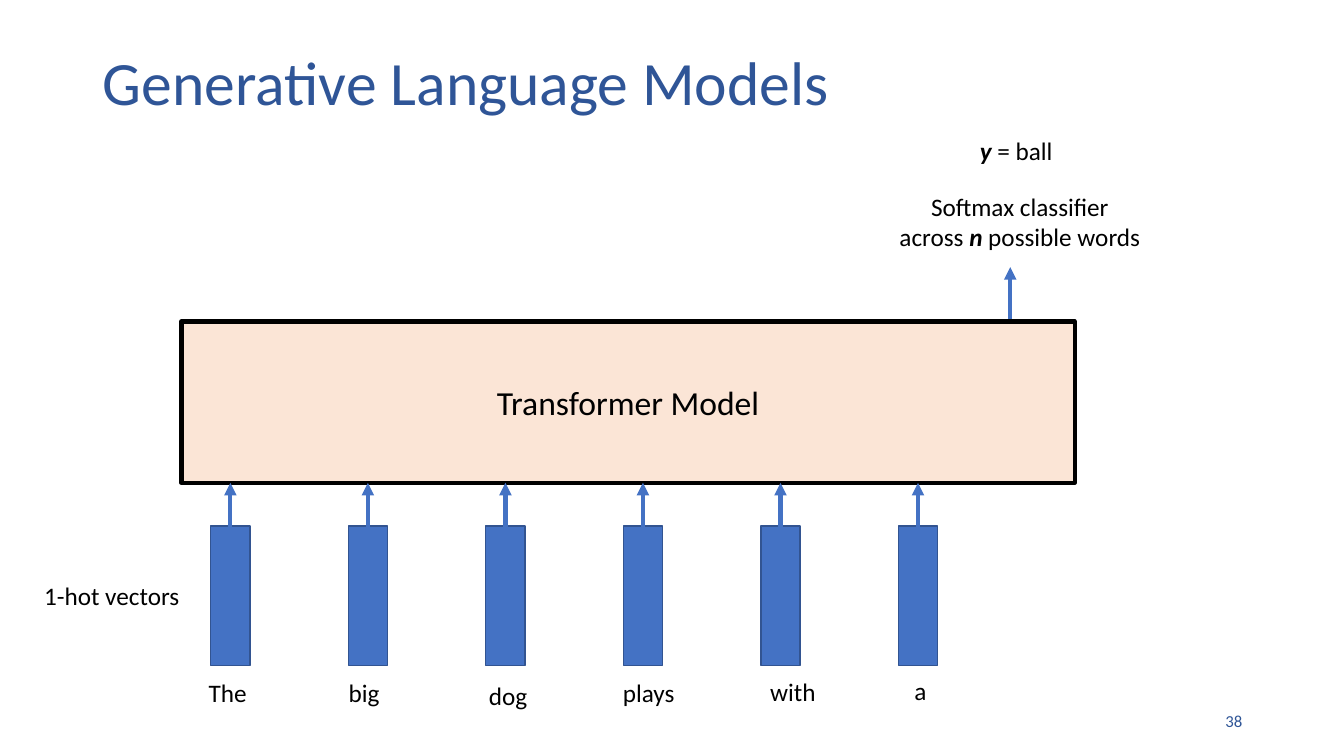
"""Builds a slide on generative language models: word vectors feeding a transformer."""
from pptx import Presentation, util as u
from pptx.dml.color import RGBColor
from pptx.enum import shapes, text
from pptx.oxml import parse_xml
from pptx.oxml.ns import nsdecls

TITLE = "Generative Language Models"
MODEL = "Transformer Model"
WORDS = [("The", 1.97, 6.67), ("big", 3.36, 6.67), ("dog", 4.75, 6.70),
         ("plays", 6.08, 6.67), ("with", 7.54, 6.66), ("a", 8.97, 6.65)]
LABELS = [
    ([[("1-hot vectors", False)]], (0.34, 5.71, 1.56, 0.4)),
    ([[("Softmax classifier", False)],
      [("across ", False), ("n", True), (" possible words", False)]],
     (8.81, 1.85, 2.61, 0.71)),
    ([[("y", True), (" = ball", False)]], (9.62, 1.29, 0.99, 0.4)),
]
PAGE = "38"

NAVY = RGBColor(0x2F, 0x55, 0x97)
BLUE = RGBColor(0x44, 0x72, 0xC4)
EDGE = RGBColor(0x32, 0x54, 0x91)
PEACH = RGBColor(0xFB, 0xE5, 0xD6)
BLACK = RGBColor(0, 0, 0)

FIRST, PITCH = 2.09, 1.364
VECTOR_TOP, VECTOR_W, VECTOR_H = 5.22, 0.39, 1.38
MODEL_BOX = (1.8, 3.19, 8.86, 1.6)
MODEL_BOTTOM = MODEL_BOX[1] + MODEL_BOX[3]
LEFT, CENTER, RIGHT = text.PP_ALIGN.LEFT, text.PP_ALIGN.CENTER, text.PP_ALIGN.RIGHT

prs = Presentation()
prs.slide_width, prs.slide_height = u.Inches(13.33), u.Inches(7.5)
s = prs.slides.add_slide(prs.slide_layouts[5])


def inches(values):
    return [u.Inches(v) for v in values]


def write(tf, paragraphs, size=18, color=BLACK, align=LEFT, anchor=text.MSO_ANCHOR.TOP,
          wrap=False, spacing=None):
    tf.word_wrap = wrap
    tf.auto_size = text.MSO_AUTO_SIZE.NONE
    tf.vertical_anchor = anchor
    for i, runs in enumerate(paragraphs):
        p = tf.add_paragraph() if i else tf.paragraphs[0]
        p.alignment = align
        p.line_spacing = spacing
        for words, strong in runs:
            r = p.add_run()
            r.text = words
            r.font.name, r.font.size = "Calibri", u.Pt(size)
            r.font.color.rgb = color
            r.font.bold = r.font.italic = strong


def label(paragraphs, box, **fmt):
    write(s.shapes.add_textbox(*inches(box)).text_frame, paragraphs, **fmt)


def rect(box, fill, line, width):
    sp = s.shapes.add_shape(shapes.MSO_SHAPE.RECTANGLE, *inches(box))
    sp.shadow.inherit = False
    sp.fill.solid()
    sp.fill.fore_color.rgb = fill
    sp.line.color.rgb = line
    sp.line.width = u.Pt(width)
    return sp


def arrow_up(x, start, end):
    c = s.shapes.add_connector(shapes.MSO_CONNECTOR.STRAIGHT, *inches((x, start, x, end)))
    c.line.color.rgb = BLUE
    c.line.width = u.Pt(3)
    c.line._get_or_add_ln().append(parse_xml(f'<a:tailEnd {nsdecls("a")} type="triangle"/>'))
    c._element.spPr.append(parse_xml(f'<a:effectLst {nsdecls("a")}/>'))


title = s.shapes.title
title.left, title.top, title.width, title.height = inches((0.92, 0.4, 11.5, 0.9))
write(title.text_frame, [[(TITLE, False)]], size=44, color=NAVY,
      anchor=text.MSO_ANCHOR.MIDDLE, wrap=True, spacing=0.9)

model = rect(MODEL_BOX, PEACH, BLACK, 3)
write(model.text_frame, [[(MODEL, False)]], size=24, align=CENTER,
      anchor=text.MSO_ANCHOR.MIDDLE, wrap=True)

for i, (word, x, y) in enumerate(WORDS):
    left = FIRST + i * PITCH
    rect((left, VECTOR_TOP, VECTOR_W, VECTOR_H), BLUE, EDGE, 1)
    arrow_up(left + VECTOR_W / 2, VECTOR_TOP + 0.09, MODEL_BOTTOM)
    label([[(word, False)]], (x, y, 0.7, 0.4))

arrow_up(10.02, 3.16, 2.65)
for paragraphs, box in LABELS:
    label(paragraphs, box, align=CENTER if len(paragraphs) > 1 else LEFT)
label([[(PAGE, False)]], (9.42, 6.95, 3, 0.4), size=12, color=NAVY, align=RIGHT,
      anchor=text.MSO_ANCHOR.MIDDLE, wrap=True)

prs.save("out.pptx")
